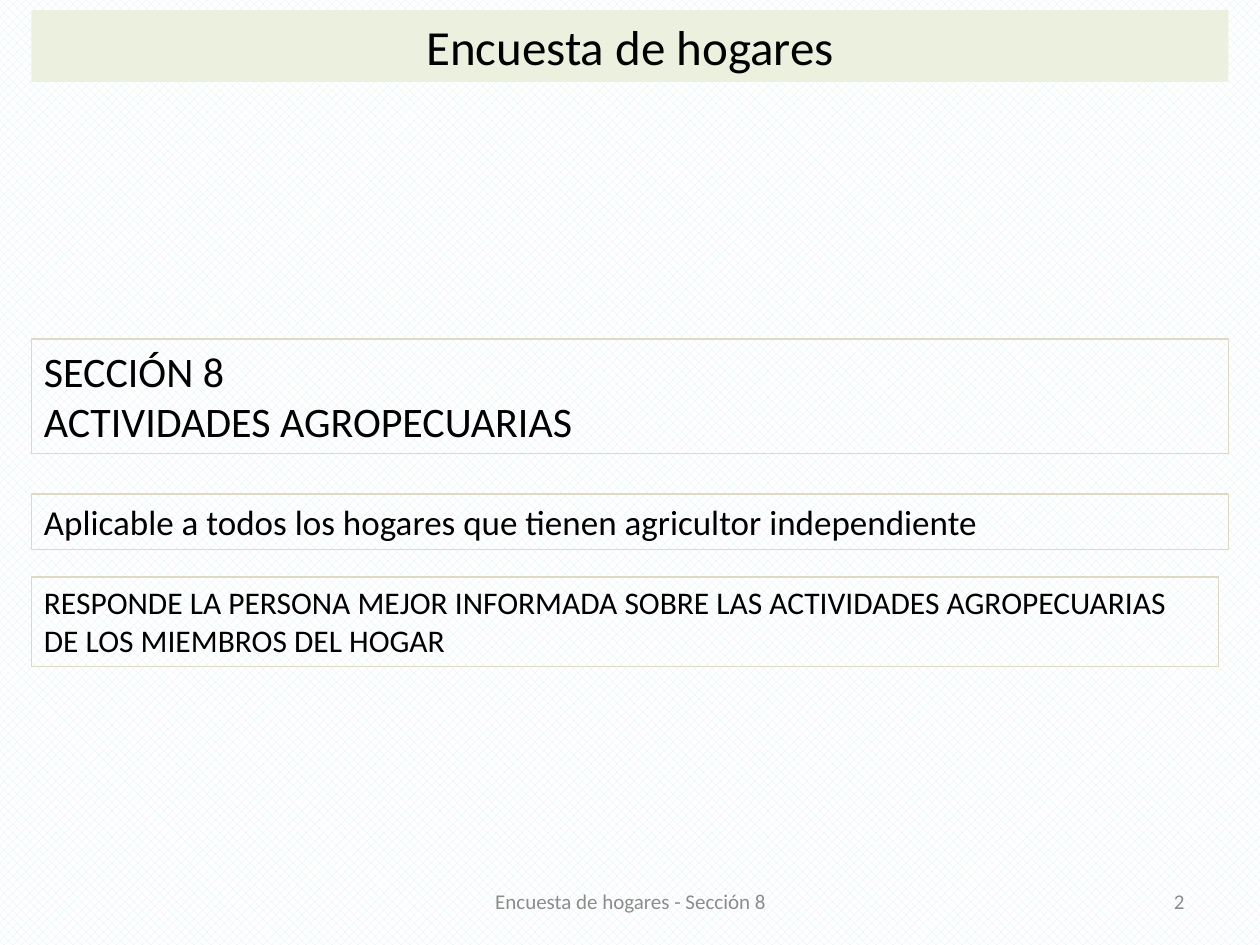
from pptx import Presentation
from pptx.dml.color import RGBColor
from pptx.enum.dml import MSO_PATTERN
from pptx.enum.text import MSO_ANCHOR, MSO_AUTO_SIZE, PP_ALIGN
from pptx.util import Inches, Pt

COLORS = {
    "ink": "000000",
    "gray": "8C8C8C",
    "band": "EBF1DE",
    "edge": "DDD9C3",
    "dots": "DBEEF4",
    "page": "FFFFFF",
}
FONT = "Calibri"
LEFT = 0.25
WIDE = 9.5

TITLE = ("Encuesta de hogares", 0.08, WIDE, 0.57, 28)
PANELS = [
    ("SECCIÓN 8\nACTIVIDADES AGROPECUARIAS", 2.69, WIDE, 0.91, 24),
    ("Aplicable a todos los hogares que tienen agricultor independiente",
     3.92, WIDE, 0.44, 20),
    ("RESPONDE LA PERSONA MEJOR INFORMADA SOBRE LAS ACTIVIDADES "
     "AGROPECUARIAS DE LOS MIEMBROS DEL HOGAR", 4.58, 9.42, 0.71, 18),
]
FOOTER = [
    ("Encuesta de hogares - Sección 8", 3.42, 3.17, PP_ALIGN.CENTER),
    ("2", 7.17, 2.33, PP_ALIGN.RIGHT),
]


def color(name):
    return RGBColor.from_string(COLORS[name])


def add_text(slide, text, spot, size, ink="ink", align=PP_ALIGN.LEFT):
    box = slide.shapes.add_textbox(*map(Inches, spot))
    frame = box.text_frame
    frame.text = text
    frame.word_wrap = True
    for para in frame.paragraphs:
        para.alignment = align
        for run in para.runs:
            run.font.name = FONT
            run.font.size = Pt(size)
            run.font.color.rgb = color(ink)
    return box


def main():
    deck = Presentation()
    deck.slide_width, deck.slide_height = Inches(10), Inches(7.5)
    slide = deck.slides.add_slide(deck.slide_layouts[6])

    back = slide.background.fill
    back.patterned()
    back.pattern = MSO_PATTERN.PERCENT_50
    back.fore_color.rgb = color("dots")
    back.back_color.rgb = color("page")

    text, top, width, height, size = TITLE
    title = add_text(slide, text, (LEFT, top, width, height), size,
                     align=PP_ALIGN.CENTER)
    title.text_frame.auto_size = MSO_AUTO_SIZE.SHAPE_TO_FIT_TEXT
    title.fill.solid()
    title.fill.fore_color.rgb = color("band")

    for text, top, width, height, size in PANELS:
        panel = add_text(slide, text, (LEFT, top, width, height), size)
        panel.text_frame.auto_size = MSO_AUTO_SIZE.SHAPE_TO_FIT_TEXT
        panel.line.color.rgb = color("edge")
        panel.line.width = Pt(0.75)

    for text, left, width, align in FOOTER:
        foot = add_text(slide, text, (left, 6.95, width, 0.4), 12, "gray", align)
        foot.text_frame.vertical_anchor = MSO_ANCHOR.MIDDLE

    deck.save("out.pptx")


if __name__ == "__main__":
    main()
